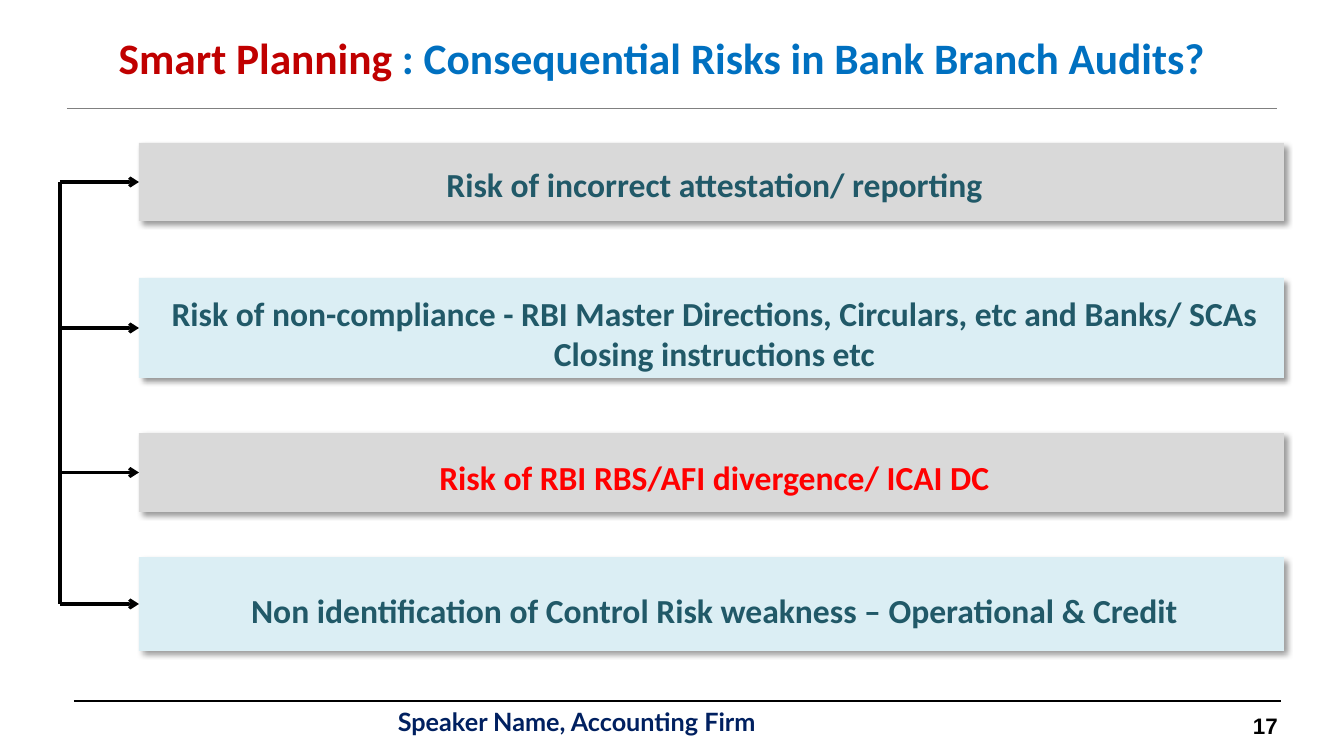
from lxml import etree
from pptx import Presentation
from pptx.dml.color import RGBColor
from pptx.enum.shapes import MSO_CONNECTOR as Connector, MSO_SHAPE as Shape
from pptx.enum.text import MSO_ANCHOR as Anchor, PP_ALIGN as Align
from pptx.oxml.ns import qn
from pptx.util import Emu, Pt

TITLE = [("Smart Planning ", "C00000"),
         (": Consequential Risks in Bank Branch Audits?", "0070C0")]
GREY, PALE, TEAL, RED = "D9D9D9", "DBEEF4", "215968", "FF0000"
# text, top, height, fill, text colour, downward shift of the text
RISKS = [
    ("Risk of incorrect attestation/ reporting", 143, 78, GREY, TEAL, 2),
    ("Risk of non-compliance - RBI Master Directions, Circulars, etc and Banks/ SCAs "
     "Closing instructions etc", 278, 100, PALE, TEAL, 5),
    ("Risk of RBI RBS/AFI divergence/ ICAI DC", 433, 79, GREY, RED, 5),
    ("Non identification of Control Risk weakness – Operational & Credit",
     557, 94, PALE, TEAL, 6),
]
FOOTER = "Speaker Name, Accounting Firm"
PAGE_NUMBER = "17"
# x1, y1, x2, y2, colour
RULES = [(67, 109, 1277, 109, "808080"), (74, 701, 1281, 701, "000000")]
CARD_LEFT, CARD_WIDTH, TRUNK_X = 139, 1145, 60
INSET = 4


def px(length):
    return Emu(round(length * 914400 / 100.8))


def rgb(value):
    return RGBColor.from_string(value)


def write(para, text, size, font, colour):
    span = para.add_run()
    span.text = text
    span.font.size = Pt(size)
    span.font.name = font
    span.font.bold = True
    span.font.color.rgb = rgb(colour)


def add_line(page, x1, y1, x2, y2, colour, width):
    line = page.shapes.add_connector(Connector.STRAIGHT, px(x1), px(y1), px(x2), px(y2))
    line.line.color.rgb = rgb(colour)
    line.line.width = Pt(width)
    etree.SubElement(line._element.spPr, qn("a:effectLst"))
    return line


def add_label(page, left, top, width, height, text, size, font, colour):
    box = page.shapes.add_textbox(px(left), px(top), px(width), px(height))
    box.text_frame.word_wrap = True
    write(box.text_frame.paragraphs[0], text, size, font, colour)
    return box


def cast_shadow(shape):
    shape.shadow.inherit = False
    effects = shape._element.spPr.find(qn("a:effectLst"))
    shadow = etree.SubElement(effects, qn("a:outerShdw"), blurRad=str(Pt(4)),
                              dist=str(Pt(3)), dir="2700000", algn="tl", rotWithShape="0")
    black = etree.SubElement(shadow, qn("a:srgbClr"), val="000000")
    etree.SubElement(black, qn("a:alpha"), val="40000")


def add_card(page, text, top, height, fill, colour, shift):
    card = page.shapes.add_shape(Shape.RECTANGLE, px(CARD_LEFT), px(top),
                                 px(CARD_WIDTH), px(height))
    card.fill.solid()
    card.fill.fore_color.rgb = rgb(fill)
    card.line.fill.background()
    cast_shadow(card)
    frame = card.text_frame
    frame.word_wrap = True
    frame.vertical_anchor = Anchor.MIDDLE
    frame.margin_left, frame.margin_right = px(10), px(INSET)
    frame.margin_top, frame.margin_bottom = px(INSET + 2 * shift), px(INSET)
    frame.paragraphs[0].alignment = Align.CENTER
    write(frame.paragraphs[0], text, 24, "Calibri", colour)
    return card


def add_arrow(page, y, card):
    arrow = add_line(page, TRUNK_X, y, CARD_LEFT, y, "000000", 2.25)
    arrow.end_connect(card, 1)
    etree.SubElement(arrow.line._get_or_add_ln(), qn("a:tailEnd"), type="arrow")


def main():
    deck = Presentation()
    deck.slide_width, deck.slide_height = px(1344), px(756)
    page = deck.slides.add_slide(deck.slide_layouts[5])

    title = page.shapes.title
    title.left, title.top, title.width, title.height = px(60), px(26), px(1203), px(80)
    title.text_frame.vertical_anchor = Anchor.TOP
    heading = title.text_frame.paragraphs[0]
    heading.alignment = Align.CENTER
    for text, colour in TITLE:
        write(heading, text, 31, "Calibri", colour)

    for rule in RULES:
        add_line(page, *rule, 0.75)

    centres = [top + height / 2 for _, top, height, *_ in RISKS]
    add_line(page, TRUNK_X, centres[0], TRUNK_X, centres[-1], "000000", 2.25)
    for risk, centre in zip(RISKS, centres):
        add_arrow(page, centre, add_card(page, *risk))

    footer = add_label(page, 388, 709, 606, 24, FOOTER, 18, "Lato", "002060")
    footer.text_frame.vertical_anchor = Anchor.MIDDLE
    add_label(page, 1243, 707, 68, 33, PAGE_NUMBER, 16, "Arial", "000000")
    deck.save("out.pptx")


if __name__ == "__main__":
    main()
